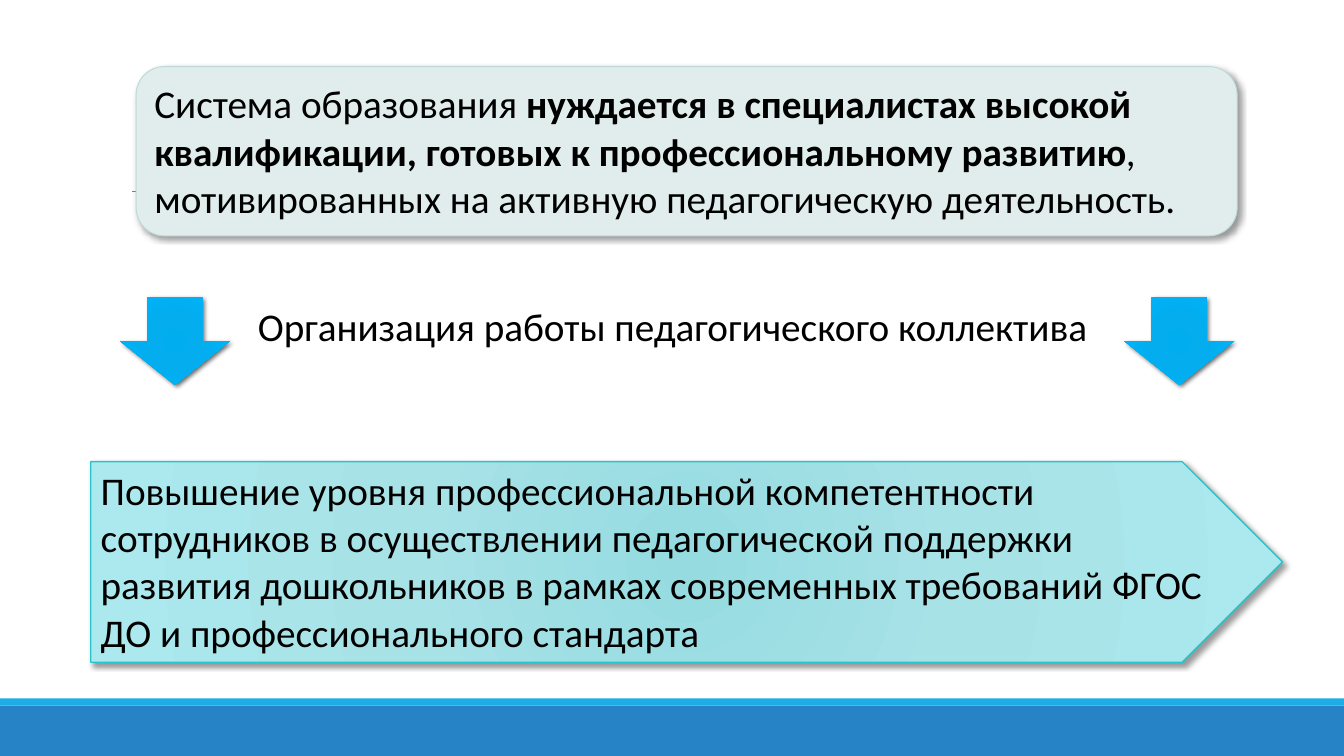
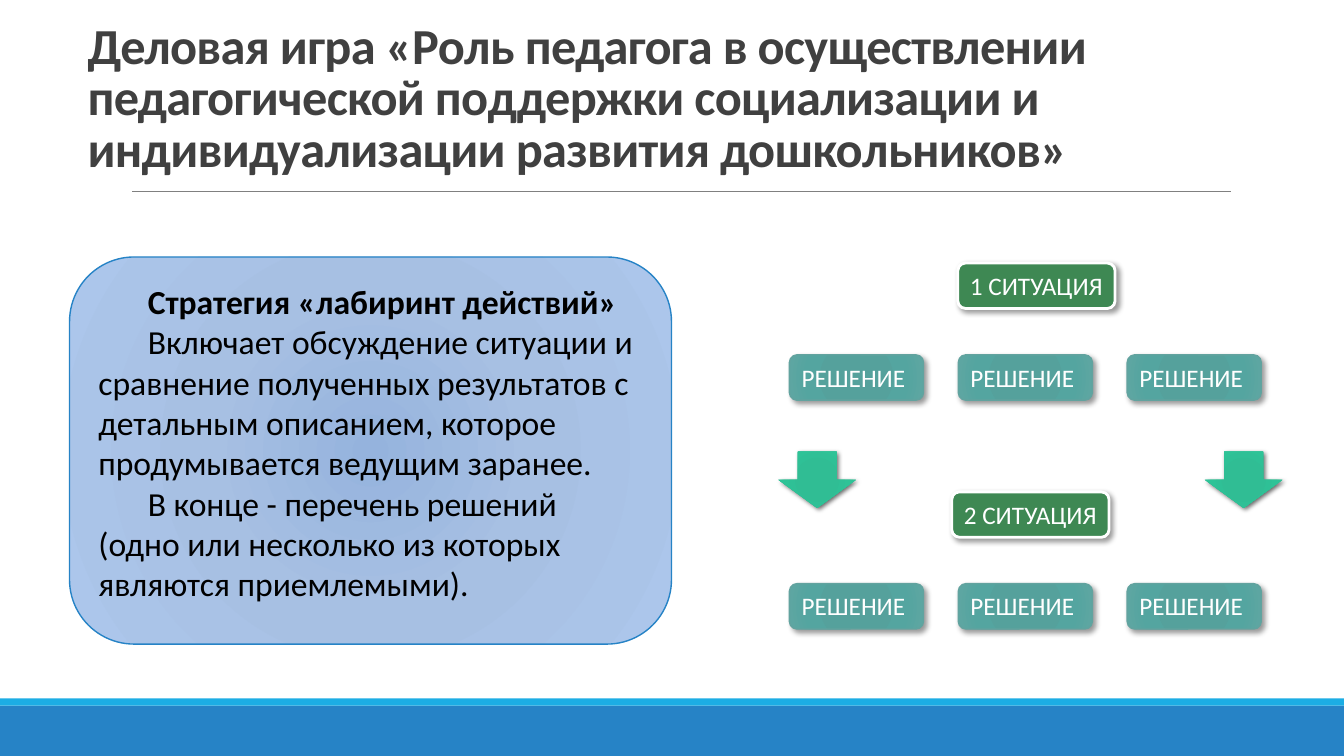
from lxml import etree
from pptx import Presentation
from pptx import util as u
from pptx.dml.color import RGBColor
from pptx.enum import shapes, text
from pptx.oxml import ns

SHAPE = shapes.MSO_SHAPE
ANCHOR = text.MSO_ANCHOR
FIT = text.MSO_AUTO_SIZE
FONT = "Calibri"
BLACK, WHITE, TITLE, RULE = "000000", "FFFFFF", "404040", "808080"
BLUE, SKY, GREEN = "2683C6", "1CADE4", "3E8853"
AQUA = [(0, "95DBE0"), (45, "A7E2E7"), (100, "ACE9EE")]
HAZE = [(0, "95B3DD"), (45, "A7C0E3"), (100, "ACC6EB")]
AZURE = [(0, "00ADEF"), (34, "03ADEE"), (70, "00B1F5"), (100, "12B1EE")]
TEAL = [(0, "52A19C"), (34, "55A19C"), (70, "54A5A0"), (100, "5FA6A2")]
MINT = [(0, "2DBE94"), (34, "30BD94"), (70, "2EC397"), (100, "3CC09A")]
SOFT = (40, 4, 3)
FIRM = (60, 3.5, 2)


def color(code):
    """Turn a hex string into a colour."""
    return RGBColor.from_string(code)


def node(parent, tag, **attrs):
    """Add a drawing element with its attributes."""
    item = etree.SubElement(parent, ns.qn("a:" + tag))
    for key, value in attrs.items():
        item.set(key, str(value))
    return item


def glow(shape, stops):
    """Fill a shape with a gradient that spreads from its centre."""
    shape.fill.background()
    props = shape.element.spPr
    blank = props.find(ns.qn("a:noFill"))
    grad = etree.Element(ns.qn("a:gradFill"), rotWithShape="1")
    props.replace(blank, grad)
    items = node(grad, "gsLst")
    for pos, code in stops:
        node(node(items, "gs", pos=pos * 1000), "srgbClr", val=code)
    ring = node(grad, "path", path="circle")
    node(ring, "fillToRect", l=100000, t=100000, r=100000, b=100000)


def shade(shape, alpha, blur, dist):
    """Cast a black shadow to the lower right."""
    effects = shape.element.spPr.find(ns.qn("a:effectLst"))
    drop = node(effects, "outerShdw", blurRad=int(u.Pt(blur)), dist=int(u.Pt(dist)),
                dir=45 * 60000, algn="tl", rotWithShape=0)
    node(node(drop, "srgbClr", val=BLACK), "alpha", val=alpha * 1000)


def draw(slide, kind, box, fill, line=None, width=1, shadow=None):
    """Add a preset shape with a plain or a gradient fill."""
    shape = slide.shapes.add_shape(kind, *map(u.Inches, box))
    shape.shadow.inherit = False
    if isinstance(fill, str):
        shape.fill.solid()
        shape.fill.fore_color.rgb = color(fill)
    else:
        glow(shape, fill)
    if line:
        shape.line.color.rgb = color(line)
        shape.line.width = u.Pt(width)
    else:
        shape.line.fill.background()
    if shadow:
        shade(shape, *shadow)
    return shape


def write(shape, paras, size=28, ink=BLACK, wrap=True, grow=True,
          anchor=ANCHOR.TOP, indent=0, leading=None, spacing=None):
    """Write paragraphs, each a list of (text, bold) runs."""
    frame = shape.text_frame
    frame.word_wrap = wrap
    frame.auto_size = FIT.SHAPE_TO_FIT_TEXT if grow else FIT.NONE
    frame.vertical_anchor = anchor
    for index, runs in enumerate(paras):
        para = frame.add_paragraph() if index else frame.paragraphs[0]
        para.alignment = text.PP_ALIGN.LEFT
        if leading:
            para.line_spacing = leading
        if indent:
            props = para._p.get_or_add_pPr()
            props.set("marL", "0")
            props.set("indent", str(int(u.Inches(indent))))
        for words, bold in runs:
            run = para.add_run()
            run.text = words
            run.font.name = FONT
            run.font.size = u.Pt(size)
            run.font.bold = bold
            run.font.color.rgb = color(ink)
            if spacing:
                run.font._element.set("spc", str(int(spacing * 100)))


def base(deck):
    """Add a slide with the bands and the rule that all slides share."""
    slide = deck.slides.add_slide(deck.slide_layouts[6])
    draw(slide, SHAPE.RECTANGLE, (0, 7, 13.33, 0.5), BLUE)
    draw(slide, SHAPE.RECTANGLE, (0, 6.93, 13.33, 0.07), SKY)
    ends = map(u.Inches, (1.31, 1.9, 12.21, 1.9))
    rule = slide.shapes.add_connector(shapes.MSO_CONNECTOR.STRAIGHT, *ends)
    rule.line.color.rgb = color(RULE)
    rule.line.width = u.Pt(0.5)
    node(rule._element.spPr, "effectLst")
    return slide


def arrows(slide, lefts, top, width, height, fill):
    """Draw a level set of down arrows."""
    for left in lefts:
        draw(slide, SHAPE.DOWN_ARROW, (left, top, width, height), fill, shadow=FIRM)


def label(slide, box, words, fill, line, width):
    """Draw a rounded label with white text."""
    shape = draw(slide, SHAPE.ROUNDED_RECTANGLE, box, fill, line, width, SOFT)
    write(shape, [[(words, False)]], size=18, ink=WHITE, wrap=False)


def stage(slide, left, top, head, shift):
    """Place a situation above its row of three solutions."""
    label(slide, (left + shift, top, 1.56, 0.45), head, GREEN, WHITE, 2)
    for col in range(3):
        box = (left + col * 1.675, top + 0.91, 1.33, 0.45)
        label(slide, box, "РЕШЕНИЕ", TEAL, "62A39F", 1)


def need(deck):
    """Build the slide on the need for skilled staff."""
    slide = base(deck)
    goal = draw(slide, SHAPE.PENTAGON, (0.9, 4.58, 11.82, 1.99), AQUA, "28C4CC", 1, SOFT)
    write(goal, [[("Повышение уровня профессиональной компетентности сотрудников в "
                   "осуществлении педагогической поддержки развития дошкольников в рамках "
                   "современных требований ФГОС ДО и профессионального стандарта", False)]])
    claim = draw(slide, SHAPE.ROUNDED_RECTANGLE, (1.35, 0.66, 10.92, 1.68),
                 "E0EDEC", "C0DAD9", 0.75, SOFT)
    write(claim, [[
        ("Система образования ", False),
        ("нуждается в специалистах высокой квалификации, "
         "готовых к профессиональному развитию", True),
        (", мотивированных на активную педагогическую деятельность.", False)]])
    arrows(slide, (1.19, 11.15), 2.95, 1.09, 0.87, AZURE)
    note = slide.shapes.add_textbox(*map(u.Inches, (2.46, 2.95, 8.51, 0.57)))
    write(note, [[("Организация работы педагогического коллектива", False)]], wrap=False)


def game(deck):
    """Build the slide on the business game."""
    slide = base(deck)
    plan = draw(slide, SHAPE.ROUNDED_RECTANGLE, (0.69, 2.55, 5.97, 3.84), HAZE, BLUE)
    write(plan, [
        [("Стратегия «лабиринт действий»", True)],
        [("Включает обсуждение ситуации и сравнение полученных результатов с детальным "
          "описанием, которое продумывается ведущим заранее.", False)],
        [("В конце - перечень решений (одно или несколько из которых являются "
          "приемлемыми).", False)]], size=24, grow=False, indent=0.49)
    title = slide.shapes.add_textbox(*map(u.Inches, (0.77, 0.15, 11.79, 1.66)))
    write(title, [[("Деловая игра «Роль педагога в осуществлении педагогической поддержки "
                    "социализации и индивидуализации развития дошкольников»", True)]],
          size=36, ink=TITLE, grow=False, anchor=ANCHOR.BOTTOM, leading=0.85, spacing=-0.5)
    stage(slide, 7.83, 2.61, "1 СИТУАЦИЯ", 1.67)
    stage(slide, 7.83, 4.88, "2 СИТУАЦИЯ", 1.61)
    arrows(slide, (7.72, 11.95), 4.48, 0.77, 0.56, MINT)


def main():
    """Build and save the deck."""
    deck = Presentation()
    deck.slide_width, deck.slide_height = u.Inches(13.33), u.Inches(7.5)
    need(deck)
    game(deck)
    deck.save("out.pptx")


if __name__ == "__main__":
    main()
